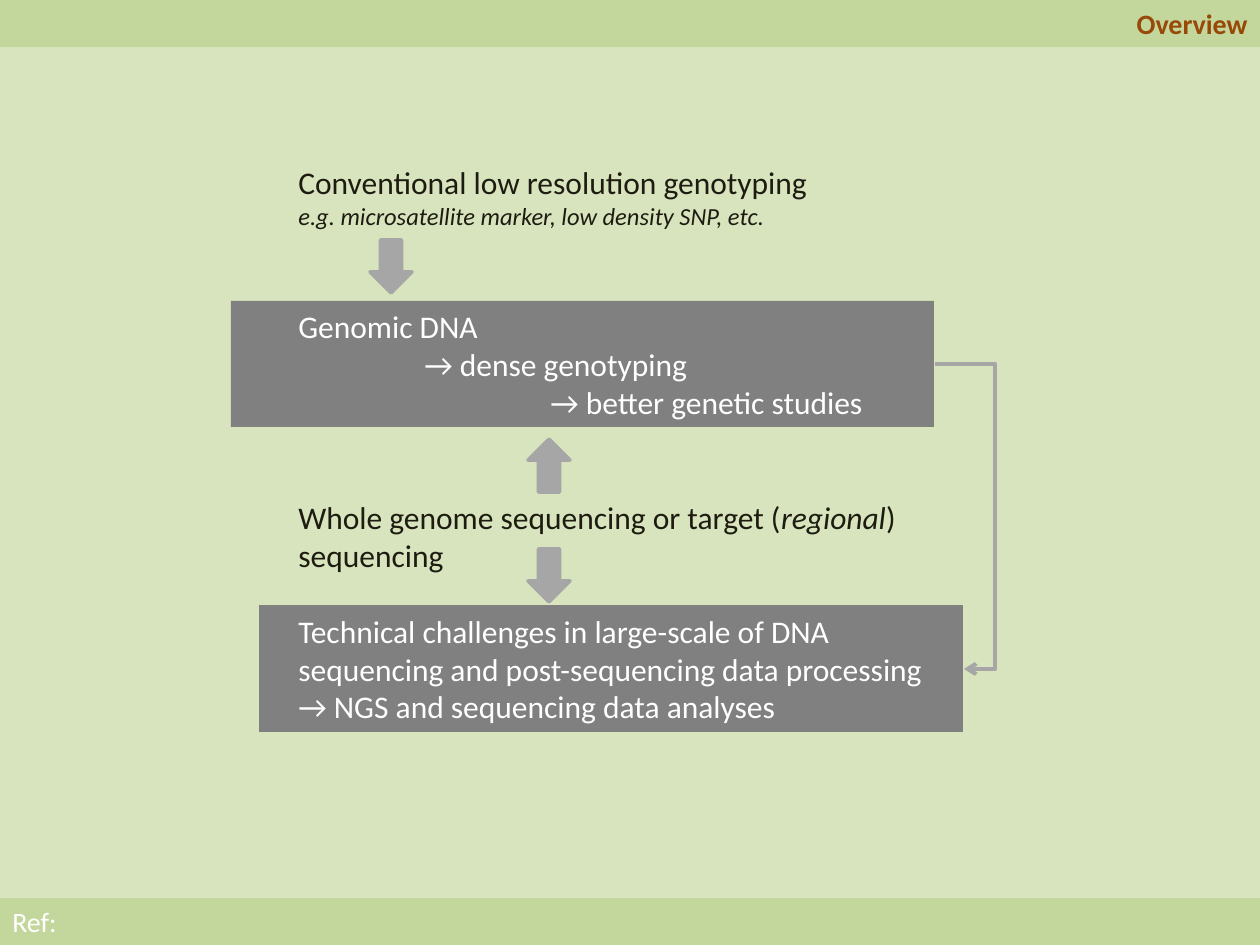
"""Build the overview slide on genotyping and sequencing."""
from lxml.etree import SubElement
from pptx import Presentation
from pptx.dml.color import RGBColor
from pptx.enum.shapes import MSO_CONNECTOR, MSO_SHAPE
from pptx.enum.text import PP_ALIGN
from pptx.oxml.ns import qn
from pptx.util import Pt

SCALE = 914400 / 126
FONT = "Calibri"
COLORS = {
    "background": "D7E4BD", "band": "C3D69B", "heading": "984807",
    "panel": "808080", "arrow": "A6A6A6", "dark": "1E1C11", "light": "FFFFFF",
}


def px(*lengths):
    return [round(length * SCALE) for length in lengths]


def add_block(kind, box, color, line_width=0):
    block = slide.shapes.add_shape(kind, *px(*box))
    block.shadow.inherit = False
    block.fill.solid()
    block.fill.fore_color.rgb = RGBColor.from_string(COLORS[color])
    if line_width:
        block.line.color.rgb = RGBColor.from_string(COLORS[color])
        block.line.width = Pt(line_width)
    else:
        block.line.fill.background()
    return block


presentation = Presentation()
presentation.slide_width, presentation.slide_height = px(1260, 945)
slide = presentation.slides.add_slide(presentation.slide_layouts[6])
slide.background.fill.solid()
slide.background.fill.fore_color.rgb = RGBColor.from_string(COLORS["background"])

for left, top in [(260, 606), (231, 301)]:
    add_block(MSO_SHAPE.RECTANGLE, (left, top, 703, 126), "panel", 0.5)

for top, label, color, alignment, bold in [
    (0, "Overview", "heading", PP_ALIGN.RIGHT, True),
    (898, "Ref:", "light", PP_ALIGN.LEFT, False),
]:
    band = add_block(MSO_SHAPE.RECTANGLE, (0, top, 1260, 47), "band")
    band.text_frame.text = label
    paragraph = band.text_frame.paragraphs[0]
    paragraph.alignment = alignment
    font = paragraph.runs[0].font
    font.name, font.size, font.bold = FONT, Pt(16), bold
    font.color.rgb = RGBColor.from_string(COLORS[color])

outline = slide.shapes.add_textbox(*px(286, 157, 683, 577)).text_frame
outline.word_wrap = True
for index, (parts, size, color, indent, gap) in enumerate([
    (["Conventional low resolution genotyping"], 18, "dark", 0, 0),
    (["", "e.g. microsatellite marker, low density SNP, etc."], 14, "dark", 0, 0),
    (["Genomic DNA"], 18, "light", 0, 44),
    (["→ dense genotyping"], 18, "light", 126, 0),
    (["→ better genetic studies"], 18, "light", 252, 0),
    (["Whole genome sequencing or target (", "regional", ") sequencing"], 18, "dark", 0, 44),
    (["Technical challenges in large-scale of DNA sequencing and "
      "post-sequencing data processing"], 18, "light", 0, 22),
    (["→ NGS and sequencing data analyses"], 18, "light", 0, 0),
]):
    paragraph = outline.add_paragraph() if index else outline.paragraphs[0]
    paragraph.space_before = Pt(gap)
    if indent:
        paragraph._p.get_or_add_pPr().set("marL", str(px(indent)[0]))
    for position, part in enumerate(parts):
        if part:
            run = paragraph.add_run()
            run.text = part
            run.font.name, run.font.size = FONT, Pt(size)
            run.font.italic = position == 1
            run.font.color.rgb = RGBColor.from_string(COLORS[color])

for left, top, rotation in [(370, 240, 0), (528, 439, 180), (528, 549, 0)]:
    arrow = add_block(MSO_SHAPE.DOWN_ARROW, (left, top, 42, 53), "arrow", 2)
    arrow.rotation = rotation

challenge_link = slide.shapes.add_connector(MSO_CONNECTOR.ELBOW, *px(935, 364, 964, 669))
challenge_link.line.color.rgb = RGBColor.from_string(COLORS["arrow"])
challenge_link.line.width = Pt(2.25)
link_properties = challenge_link._element.spPr
bend = link_properties.find(qn("a:prstGeom")).find(qn("a:avLst"))
SubElement(bend, qn("a:gd"), name="adj1", fmla="val 207600")
SubElement(link_properties.find(qn("a:ln")), qn("a:tailEnd"), type="arrow")
SubElement(link_properties, qn("a:effectLst"))

presentation.save("out.pptx")
